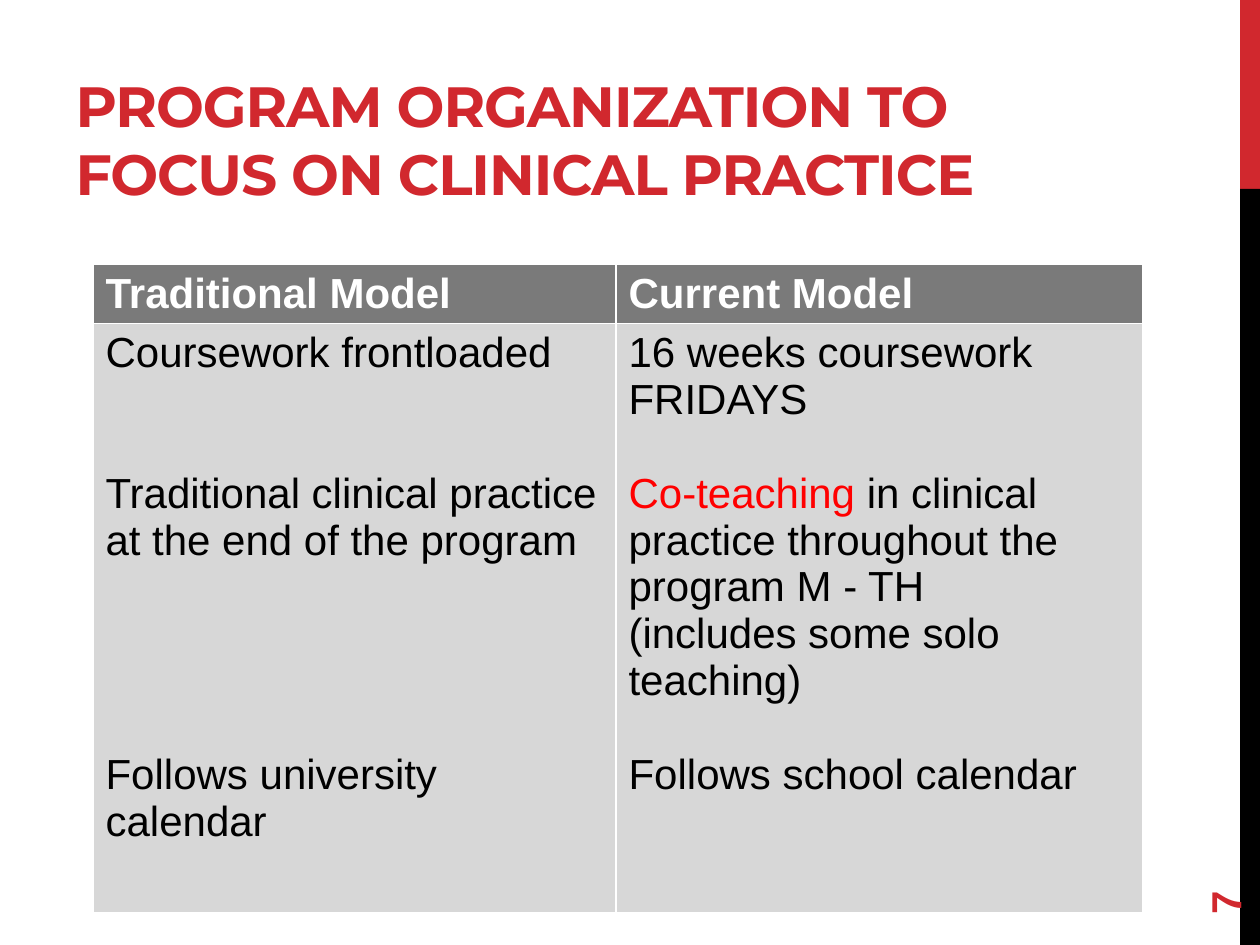
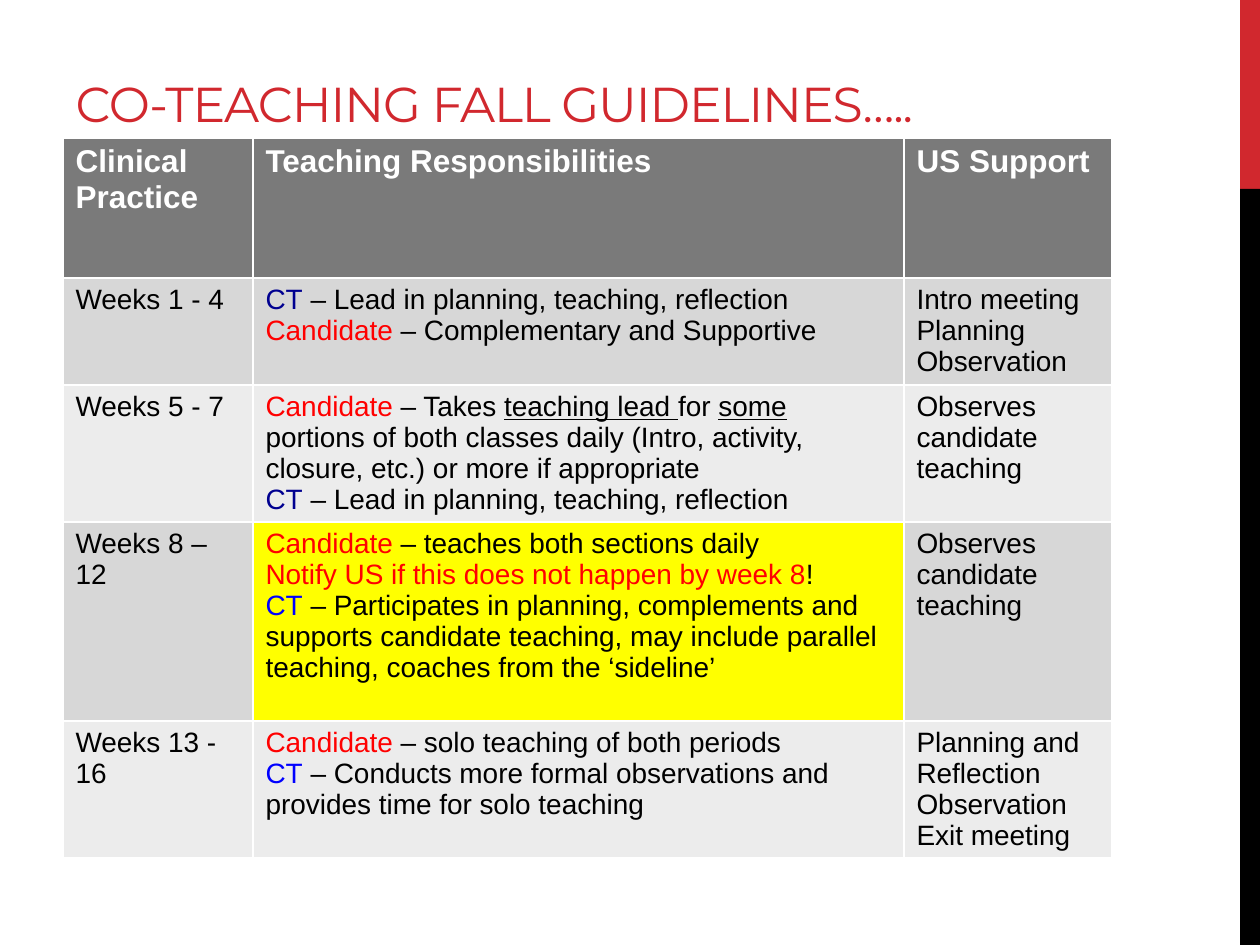
from dataclasses import dataclass
from typing import NamedTuple

import pptx
import pptx.dml.color
import pptx.enum.shapes
import pptx.enum.text
import pptx.util

RGB = pptx.dml.color.RGBColor
Pt = pptx.util.Pt
ANCHOR = pptx.enum.text.MSO_ANCHOR

RED = RGB(0xD1, 0x28, 0x2E)
BLACK = RGB(0, 0, 0)
WHITE = RGB(255, 255, 255)
HEAD = RGB(0x7A, 0x7A, 0x7A)
DARK = RGB(0xD7, 0xD7, 0xD7)
LIGHT = RGB(0xEC, 0xEC, 0xEC)
YELLOW = RGB(255, 255, 0)
BRIGHT = RGB(255, 0, 0)
NAVY = RGB(0, 0, 0x90)
BLUE = RGB(0, 0, 255)

BODY = "Arial"
TITLE = "Montserrat"
DPI = 126
LEAD = 1.117  # line height of the body font, in ems


class Box(NamedTuple):
    left: int
    top: int
    width: int
    height: int


class Run(NamedTuple):
    text: str
    color: RGB = BLACK
    under: bool = False


class Para(NamedTuple):
    runs: tuple[Run, ...]
    gap: int = 0  # lines left free above


class Band(NamedTuple):
    box: Box
    color: RGB


@dataclass
class Title:
    text: str
    box: Box
    size: float
    bold: bool = False
    foot: int = 6


@dataclass
class Grid:
    left: int
    top: int
    cols: list[int]
    rows: list[int]
    heads: list[str]
    cells: list[list[list[Para]]]
    big: int
    small: int
    marked: tuple[int, int] | None = None


BANDS = [Band(Box(1240, 0, 20, 189), RED), Band(Box(1240, 189, 20, 756), BLACK)]


def px(count: int) -> int:
    return pptx.util.Emu(round(count * 914400 / DPI))


def para(*runs: Run | str, gap: int = 0) -> Para:
    return Para(tuple(Run(r) if isinstance(r, str) else r for r in runs), gap)


def paras(*lines: str) -> list[Para]:
    return [para(line) for line in lines]


def cand(rest: str) -> Para:
    return para(Run("Candidate", BRIGHT), rest)


def teach(rest: str, color: RGB) -> Para:
    return para(Run("CT", color), rest)


def draw_bands(slide) -> None:
    for band in BANDS:
        shape = slide.shapes.add_shape(
            pptx.enum.shapes.MSO_SHAPE.RECTANGLE, *map(px, band.box))
        shape.shadow.inherit = False
        shape.fill.solid()
        shape.fill.fore_color.rgb = band.color
        shape.line.fill.background()


def draw_title(slide, title: Title) -> None:
    shape = slide.shapes.title
    shape.left, shape.top, shape.width, shape.height = map(px, title.box)
    frame = shape.text_frame
    frame.text = title.text
    frame.word_wrap = True
    frame.auto_size = pptx.enum.text.MSO_AUTO_SIZE.NONE
    frame.vertical_anchor = ANCHOR.BOTTOM
    frame.margin_bottom = px(title.foot)
    line = frame.paragraphs[0]
    line.alignment = pptx.enum.text.PP_ALIGN.LEFT
    font = line.font
    font.name, font.size, font.bold = TITLE, Pt(title.size), title.bold
    font.color.rgb = RED
    for run in line.runs:
        run.font._element.set("spc", "-60")


def fill_cell(cell, text: list[Para], size: int, color: RGB,
              bold: bool = False) -> None:
    cell.fill.solid()
    cell.fill.fore_color.rgb = color
    frame = cell.text_frame
    for i, item in enumerate(text):
        line = frame.paragraphs[0] if i == 0 else frame.add_paragraph()
        line.font.name, line.font.size, line.font.bold = BODY, Pt(size), bold
        if item.gap:
            line.space_before = Pt(round(item.gap * size * LEAD, 1))
        for part in item.runs:
            run = line.add_run()
            run.text = part.text
            run.font.color.rgb = part.color
            if part.under:
                run.font.underline = True


def draw_grid(slide, grid: Grid) -> None:
    box = Box(grid.left, grid.top, sum(grid.cols), sum(grid.rows))
    table = slide.shapes.add_table(
        len(grid.rows), len(grid.cols), *map(px, box)).table
    for col, width in zip(table.columns, grid.cols):
        col.width = px(width)
    for row, height in zip(table.rows, grid.rows):
        row.height = px(height)
    for c, head in enumerate(grid.heads):
        fill_cell(table.cell(0, c), [para(Run(head, WHITE))], grid.big, HEAD, True)
    for r, row in enumerate(grid.cells, 1):
        for c, text in enumerate(row):
            color = DARK if r % 2 else LIGHT
            if (r, c) == grid.marked:
                color = YELLOW
            fill_cell(table.cell(r, c), text, grid.small, color)


def draw_page(slide, number: str) -> None:
    box = slide.shapes.add_textbox(*map(px, Box(1134, 811, 181, 50)))
    box.rotation = 270
    frame = box.text_frame
    frame.word_wrap = True
    frame.vertical_anchor = ANCHOR.MIDDLE
    frame.text = number
    font = frame.paragraphs[0].font
    font.name, font.size, font.bold = BODY, Pt(24), True
    font.color.rgb = RED


def add_slide(deck, title: Title, grid: Grid):
    slide = deck.slides.add_slide(deck.slide_layouts.get_by_name("Title Only"))
    draw_bands(slide)
    draw_title(slide, title)
    draw_grid(slide, grid)
    return slide


MODELS = Grid(
    left=93, top=264, cols=[523, 527], rows=[59, 589], big=24, small=24,
    heads=["Traditional Model", "Current Model"],
    cells=[[
        [para("Coursework frontloaded"),
         para("Traditional clinical practice at the end of the program", gap=2),
         para("Follows university calendar", gap=4)],
        [para("16 weeks coursework FRIDAYS"),
         para(Run("Co-teaching ", BRIGHT),
              "in clinical practice throughout the program M - TH", gap=1),
         para("(includes some solo teaching)"),
         para("Follows school calendar", gap=1)],
    ]],
)

LEADS = " – Lead in planning, teaching, reflection"
WEEKS = Grid(
    left=63, top=138, cols=[190, 651, 208], rows=[140, 107, 137, 199, 136],
    big=18, small=16, marked=(3, 1),
    heads=["Clinical Practice", "Teaching Responsibilities", "US Support"],
    cells=[
        [paras("Weeks 1 - 4"),
         [teach(LEADS, NAVY), cand(" – Complementary and Supportive")],
         paras("Intro meeting", "Planning Observation")],
        [paras("Weeks 5 - 7"),
         [para(Run("Candidate", BRIGHT), " – Takes ",
               Run("teaching lead ", under=True), "for ",
               Run("some", under=True),
               " portions of both classes daily (Intro, activity, closure, "
               "etc.) or more if appropriate"),
          teach(LEADS, NAVY)],
         paras("Observes", "candidate teaching")],
        [paras("Weeks 8 – 12"),
         [cand(" – teaches both sections daily"),
          para(Run("Notify US if this does not happen by week 8", BRIGHT), "!"),
          teach(" – Participates in planning, complements and supports "
                "candidate teaching, may include parallel teaching, coaches "
                "from the ‘sideline’", BLUE)],
         paras("Observes candidate teaching")],
        [paras("Weeks 13 - 16"),
         [cand(" – solo teaching of both periods"),
          teach(" – Conducts more formal observations and provides time for "
                "solo teaching", BLUE)],
         paras("Planning and Reflection Observation", "Exit meeting")],
    ],
)


def main() -> None:
    deck = pptx.Presentation()
    deck.slide_width, deck.slide_height = px(1260), px(945)
    first = add_slide(
        deck,
        Title("PROGRAM ORGANIZATION TO \vFOCUS ON CLINICAL PRACTICE",
              Box(63, 21, 1080, 232), 32.4, bold=True, foot=46),
        MODELS)
    draw_page(first, "7")
    add_slide(
        deck,
        Title("CO-TEACHING FALL GUIDELINES…..", Box(63, 21, 1091, 117), 28),
        WEEKS)
    deck.save("out.pptx")


if __name__ == "__main__":
    main()
